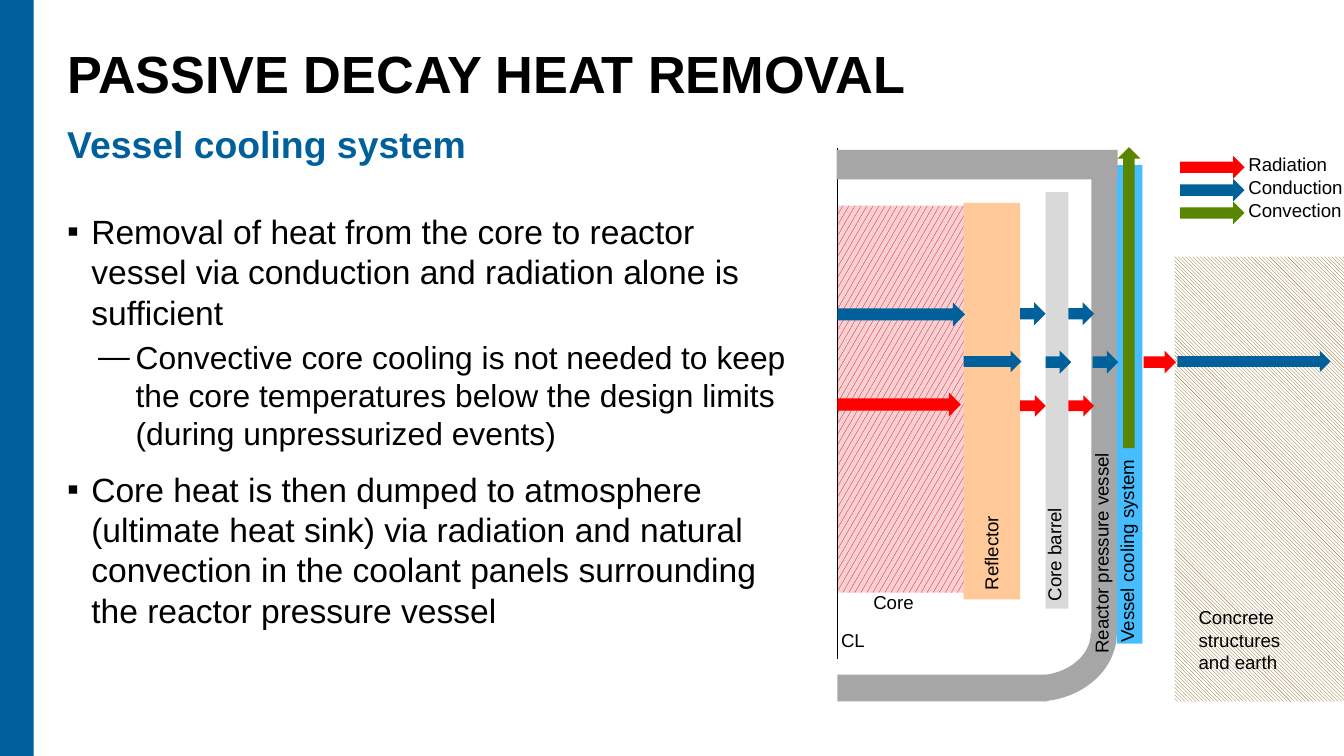
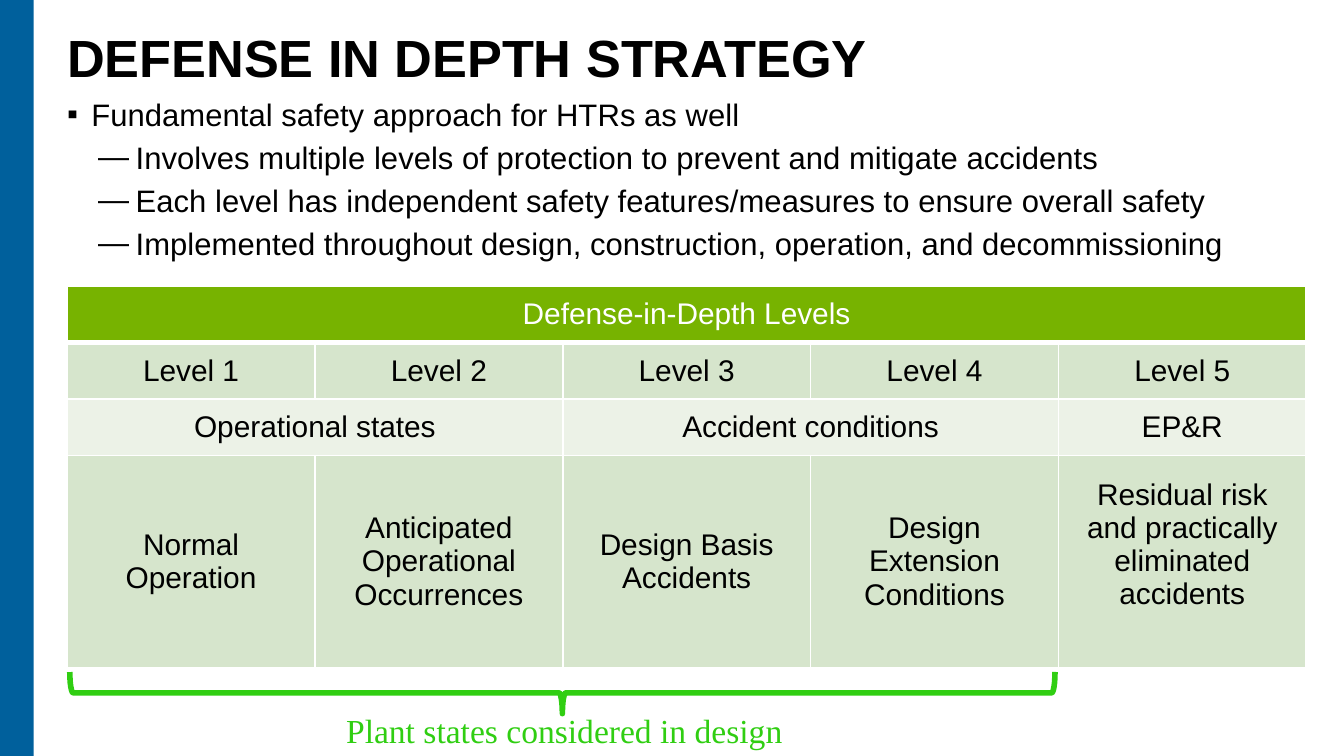
from lxml import etree
from pptx import Presentation
from pptx.dml.color import RGBColor
from pptx.enum.dml import MSO_PATTERN
from pptx.enum.shapes import MSO_CONNECTOR, MSO_SHAPE
from pptx.enum.text import MSO_ANCHOR, PP_ALIGN
from pptx.oxml.ns import qn
from pptx.util import Inches, Pt

RECTANGLE = MSO_SHAPE.RECTANGLE
ARROW = MSO_SHAPE.RIGHT_ARROW
BLOCK_ARC = MSO_SHAPE.BLOCK_ARC
BRACE = MSO_SHAPE.LEFT_BRACE
STRAIGHT = MSO_CONNECTOR.STRAIGHT
CONFETTI = MSO_PATTERN.LARGE_CONFETTI
HATCH = MSO_PATTERN.DARK_DOWNWARD_DIAGONAL
CENTER = PP_ALIGN.CENTER
TOP, MIDDLE, BOTTOM = MSO_ANCHOR.TOP, MSO_ANCHOR.MIDDLE, MSO_ANCHOR.BOTTOM

BLACK, WHITE = "000000", "FFFFFF"
BLUE, LEGEND_BLUE, RED, GREEN = "00609C", "006198", "FF0000", "598600"
STEEL, LIGHT_GRAY, ORANGE, SKY = "A6A6A6", "D9D9D9", "FFC999", "46BDFF"
HEADER_GREEN, ROW_DARK, ROW_LIGHT = "77B300", "D6E5CC", "ECF2E7"
BRACE_GREEN = "30CE12"

SLIDE_WIDTH = 10
SLIDE_HEIGHT = SLIDE_WIDTH * 9 / 16
MARGIN, TEXT_WIDTH = 0.5, 9.17
INSETS = (0.1, 0.05, 0.1, 0.05)

# Bullet style per level: character, left margin, hanging indent, space before
BULLETS = [("▪", 0.18, 0.18, 9), ("—", 0.51, 0.28, 3)]


def color(value):
    return RGBColor.from_string(value)


class Deck:
    """Holds the shared style and the current slide."""

    font = "Arial"

    def __init__(self):
        self.presentation = Presentation()
        self.presentation.slide_width = Inches(SLIDE_WIDTH)
        self.presentation.slide_height = Inches(SLIDE_HEIGHT)

    def new_slide(self, title, top, height):
        layout = self.presentation.slide_layouts[6]
        self.slide = self.presentation.slides.add_slide(layout)
        self.shapes = self.slide.shapes
        self.shape(RECTANGLE, 0, 0, 0.25, SLIDE_HEIGHT, BLUE)
        frame = self.text_frame(MARGIN, top, TEXT_WIDTH, height, anchor=BOTTOM)
        paragraph = frame.paragraphs[0]
        paragraph.line_spacing = 0.9
        self.run(paragraph, title, 28, bold=True)

    def start_group(self):
        self.shapes = self.slide.shapes.add_group_shape().shapes

    def run(self, paragraph, text, size, fill=BLACK, bold=False, font=None):
        run = paragraph.add_run()
        run.text = text
        run.font.name = font or self.font
        run.font.size = Pt(size)
        run.font.bold = bold
        run.font.color.rgb = color(fill)

    def text_frame(self, left, top, width, height, insets=(0, 0, 0, 0),
                   rotation=0, anchor=TOP):
        box = self.shapes.add_textbox(Inches(left), Inches(top),
                                      Inches(width), Inches(height))
        box.rotation = rotation
        frame = box.text_frame
        frame.word_wrap = True
        frame.vertical_anchor = anchor
        (frame.margin_left, frame.margin_top,
         frame.margin_right, frame.margin_bottom) = map(Inches, insets)
        return frame

    def label(self, text, left, top, width, height=0.27, rotation=0):
        frame = self.text_frame(left, top, width, height, INSETS, rotation)
        self.run(frame.paragraphs[0], text, 10)

    def bullets(self, left, top, width, height, items):
        frame = self.text_frame(left, top, width, height)
        for index, (level, size, text) in enumerate(items):
            paragraph = frame.paragraphs[0] if index == 0 else frame.add_paragraph()
            character, margin, hanging, space = BULLETS[level]
            paragraph.level = level
            paragraph.space_before = Pt(space if index else 0)
            properties = paragraph._p.get_or_add_pPr()
            properties.set("marL", str(Inches(margin)))
            properties.set("indent", str(-Inches(hanging)))
            etree.SubElement(properties, qn("a:buFont"), typeface=self.font)
            etree.SubElement(properties, qn("a:buChar"), char=character)
            self.run(paragraph, text, size)

    def shape(self, kind, left, top, width, height, fill=None, rotation=0,
              pattern=None, back=WHITE, line=None, adjustments=()):
        shape = self.shapes.add_shape(kind, Inches(left), Inches(top),
                                      Inches(width), Inches(height))
        shape.shadow.inherit = False
        shape.rotation = rotation
        for index, value in enumerate(adjustments):
            shape.adjustments[index] = value
        if pattern is not None:
            shape.fill.patterned()
            shape.fill.pattern = pattern
            shape.fill.fore_color.rgb = color(fill)
            shape.fill.back_color.rgb = color(back)
        elif fill:
            shape.fill.solid()
            shape.fill.fore_color.rgb = color(fill)
        else:
            shape.fill.background()
        if line:
            shape.line.color.rgb = color(line)
            shape.line.width = Pt(3)
        else:
            shape.line.fill.background()

    def line(self, left, top, right, bottom):
        connector = self.shapes.add_connector(
            STRAIGHT, Inches(left), Inches(top), Inches(right), Inches(bottom))
        connector.line.color.rgb = color(BLACK)
        connector.line.width = Pt(0.75)
        etree.SubElement(connector._element.spPr, qn("a:effectLst"))

    def table(self, left, top, width, row_heights, rows, fills):
        """Each row lists (text, column span) pairs."""
        columns = sum(span for _, span in rows[0])
        table = self.shapes.add_table(
            len(rows), columns, Inches(left), Inches(top),
            Inches(width), Inches(sum(row_heights))).table
        for column in table.columns:
            column.width = Inches(width / columns)
        for row, (height, cells, fill) in enumerate(zip(row_heights, rows, fills)):
            table.rows[row].height = Inches(height)
            for column in range(columns):
                self.cell_style(table.cell(row, column), fill, row == 0)
            column = 0
            for text, span in cells:
                cell = table.cell(row, column)
                if span > 1:
                    cell.merge(table.cell(row, column + span - 1))
                paragraph = cell.text_frame.paragraphs[0]
                paragraph.alignment = CENTER
                self.run(paragraph, text, 16, BLACK if row else WHITE)
                column += span
        return table

    def cell_style(self, cell, fill, header):
        cell.vertical_anchor = MIDDLE
        properties = cell._tc.get_or_add_tcPr()
        for side in "LRTB":
            thick = header and side == "B"
            border = etree.SubElement(properties, qn(f"a:ln{side}"),
                                      w=str(Pt(3 if thick else 1)))
            solid = etree.SubElement(border, qn("a:solidFill"))
            etree.SubElement(solid, qn("a:srgbClr"), val=WHITE)
        cell.fill.solid()
        cell.fill.fore_color.rgb = color(fill)


def heat_removal_slide(deck):
    deck.new_slide("PASSIVE DECAY HEAT REMOVAL", -0.04, 0.82)
    subtitle = deck.text_frame(MARGIN, 0.9, TEXT_WIDTH, 0.48).paragraphs[0]
    deck.run(subtitle, "Vessel cooling system", 20, BLUE, bold=True)
    deck.bullets(MARGIN, 1.57, 5.44, 3.58, [
        (0, 18, "Removal of heat from the core to reactor vessel via conduction "
                "and radiation alone is sufficient"),
        (1, 17, "Convective core cooling is not needed to keep the core "
                "temperatures below the design limits (during unpressurized events)"),
        (0, 18, "Core heat is then dumped to atmosphere (ultimate heat sink) via "
                "radiation and natural convection in the coolant panels "
                "surrounding the reactor pressure vessel"),
    ])

    # Reactor cross-section, from the core outwards
    deck.start_group()
    deck.shape(RECTANGLE, 6.23, 1.53, 0.96, 2.88, "C00000",
               pattern=CONFETTI, back="F8D0D3")
    deck.line(6.23, 1.1, 6.23, 4.9)
    deck.label("CL", 6.16, 4.63, 0.43)
    deck.shape(RECTANGLE, 7.17, 1.51, 0.42, 2.95, ORANGE)
    deck.shape(RECTANGLE, 7.78, 1.43, 0.17, 3.1, LIGHT_GRAY)
    deck.shape(RECTANGLE, 8.12, 1.31, 0.19, 3.4, STEEL)
    deck.shape(BLOCK_ARC, 7.1, 4.2, 1.21, 1.02, STEEL, rotation=180,
               adjustments=(108, 158.1, 0.19))
    deck.shape(RECTANGLE, 6.91, 4.34, 0.2, 1.56, STEEL, rotation=90)
    deck.shape(RECTANGLE, 8.31, 1.23, 0.19, 3.56, SKY)
    deck.shape(RECTANGLE, 8.74, 1.91, 1.3, 3.31, "7C5900", pattern=HATCH)
    deck.shape(RECTANGLE, 7.16, 0.18, 0.22, 2.09, STEEL, rotation=90)

    # Arrows leaving the core
    deck.shape(ARROW, 6.23, 2.25, 0.95, 0.18, BLUE)
    deck.shape(ARROW, 6.23, 2.92, 0.92, 0.18, RED)

    # Labels
    deck.label("Core", 6.4, 4.35, 0.56)
    for text, left, top, width in [
        ("Reflector", 6.99, 3.97, 0.77),
        ("Core barrel", 7.38, 3.97, 0.93),
        ("Reactor pressure vessel", 7.34, 3.97, 1.71),
        ("Vessel cooling system", 7.53, 3.89, 1.71),
    ]:
        deck.label(text, left, top, width, rotation=270)
    deck.label("Concrete structures and earth", 8.82, 4.46, 1.03, 0.61)

    # Heat flow through the layers
    for left, width, height in [(8.76, 1.14, 0.16), (7.17, 0.43, 0.16),
                                (7.78, 0.19, 0.17), (8.13, 0.19, 0.17)]:
        deck.shape(ARROW, left, 2.61, width, height, BLUE)
    for left in (7.59, 7.95):
        deck.shape(ARROW, left, 2.94, 0.19, 0.16, RED)
        deck.shape(ARROW, left, 2.25, 0.19, 0.17, BLUE)
    deck.shape(ARROW, 7.28, 2.13, 2.24, 0.17, GREEN, rotation=270)
    deck.shape(ARROW, 8.51, 2.61, 0.24, 0.17, RED)

    # Legend
    legend = [("Radiation", RED, 0.85), ("Conduction", LEGEND_BLUE, 1.02),
              ("Convection", GREEN, 1.02)]
    for index, (text, fill, width) in enumerate(legend):
        top = 1.16 + 0.17 * index
        deck.shape(ARROW, 8.78, top, 0.48, 0.17, fill)
        deck.label(text, 9.19, top - 0.07, width)


def defense_slide(deck):
    deck.new_slide("DEFENSE IN DEPTH STRATEGY", 0.18, 0.48)
    points = [
        "Fundamental safety approach for HTRs as well",
        "Involves multiple levels of protection to prevent and mitigate accidents",
        "Each level has independent safety features/measures to ensure overall safety",
        "Implemented throughout design, construction, operation, and decommissioning",
    ]
    deck.bullets(MARGIN, 0.71, 9.24, 1.39,
                 [(min(index, 1), 16.65, text) for index, text in enumerate(points)])

    # Levels table
    states = ["Normal Operation", "Anticipated Operational Occurrences",
              "Design Basis Accidents", "Design Extension Conditions",
              "Residual risk and practically eliminated accidents"]
    table = deck.table(
        MARGIN, 2.13, 9.22, [0.42, 0.42, 0.42, 1.58],
        [[("Defense-in-Depth Levels", 5)],
         [(f"Level {number}", 1) for number in range(1, 6)],
         [("Operational states", 2), ("Accident conditions", 2), ("EP&R", 1)],
         [(state, 1) for state in states]],
        [HEADER_GREEN, ROW_DARK, ROW_LIGHT, ROW_DARK])
    table.cell(3, 4).margin_bottom = Inches(0.3)  # lifts the last text

    # Brace under levels 1 to 4
    deck.shape(BRACE, 4.03, 1.49, 0.31, 7.33, rotation=270, line=BRACE_GREEN,
               adjustments=(0.08, 0.5))
    caption = deck.text_frame(1.1, 5.23, 6.2, 0.4, INSETS).paragraphs[0]
    caption.alignment = CENTER
    deck.run(caption, "Plant states considered in design", 18, BRACE_GREEN,
             font="Times New Roman")


def main():
    deck = Deck()
    heat_removal_slide(deck)
    defense_slide(deck)
    deck.presentation.save("out.pptx")


if __name__ == "__main__":
    main()
